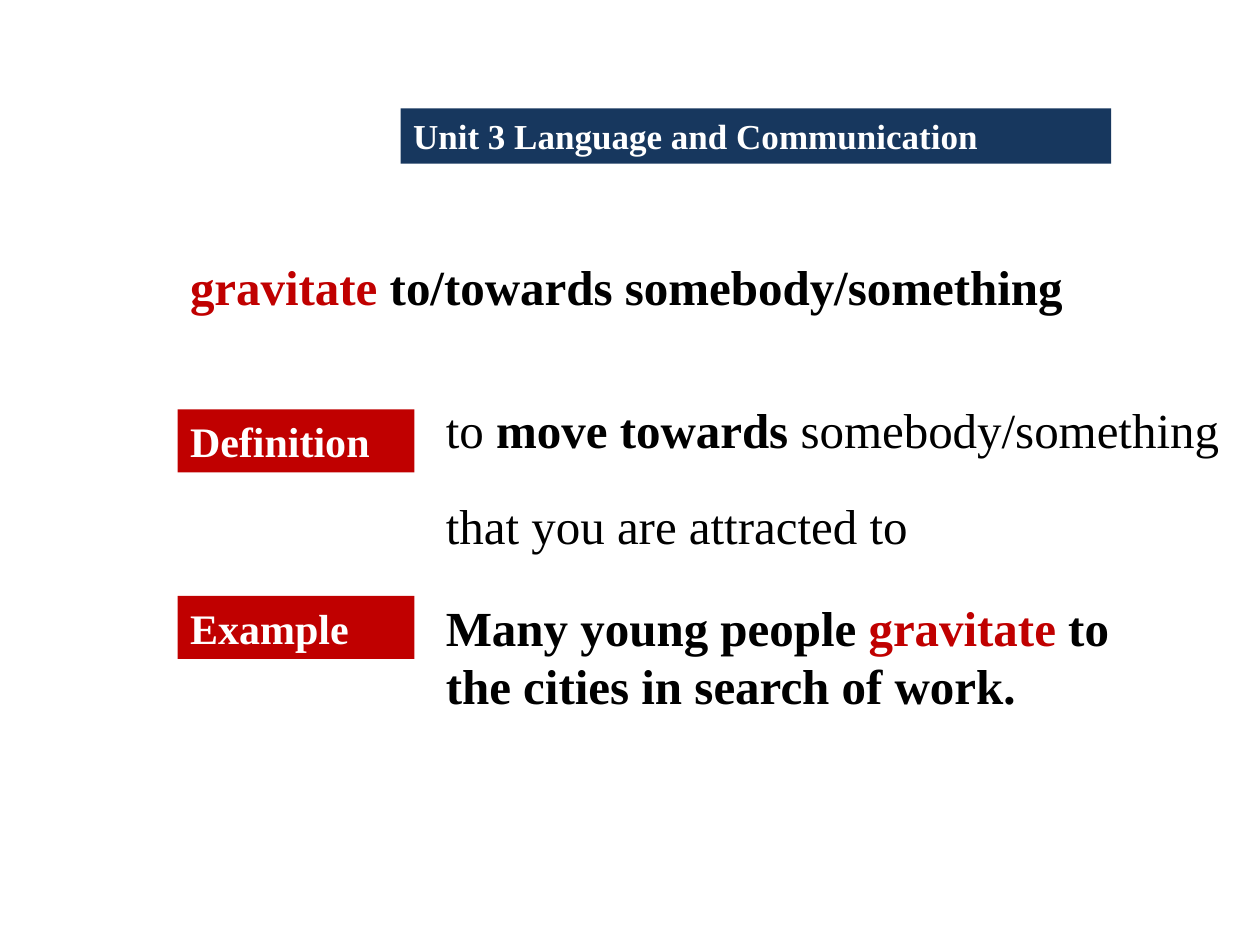
from dataclasses import dataclass

from pptx import Presentation
from pptx.dml.color import RGBColor
from pptx.enum.shapes import MSO_SHAPE as Shape
from pptx.enum.text import MSO_ANCHOR as Anchor, PP_ALIGN as Align
from pptx.util import Inches, Pt


@dataclass(frozen=True)
class Theme:
    font: str = "Times New Roman"
    navy: RGBColor = RGBColor(0x17, 0x37, 0x5E)
    red: RGBColor = RGBColor(0xC0, 0x00, 0x00)
    black: RGBColor = RGBColor(0x00, 0x00, 0x00)
    white: RGBColor = RGBColor(0xFF, 0xFF, 0xFF)
    body_size: int = 28
    label_size: int = 24
    unit_size: int = 20


THEME = Theme()


def style(run, size, color, bold):
    run.font.name = THEME.font
    run.font.size = Pt(size)
    run.font.bold = bold
    run.font.color.rgb = color


def add_banner(slide, left, top, width, height, wording, fill, size):
    banner = slide.shapes.add_shape(
        Shape.RECTANGLE, Inches(left), Inches(top), Inches(width), Inches(height)
    )
    banner.shadow.inherit = False
    banner.fill.solid()
    banner.fill.fore_color.rgb = fill
    banner.line.fill.background()
    frame = banner.text_frame
    frame.word_wrap = True
    frame.vertical_anchor = Anchor.TOP
    frame.text = wording
    line = frame.paragraphs[0]
    line.alignment = Align.LEFT
    style(line.runs[0], size, THEME.white, True)


def add_passage(slide, left, top, width, height, pieces, anchor=Anchor.TOP):
    passage = slide.shapes.add_textbox(
        Inches(left), Inches(top), Inches(width), Inches(height)
    )
    frame = passage.text_frame
    frame.word_wrap = True
    frame.vertical_anchor = anchor
    paragraph = frame.paragraphs[0]
    for wording, color, bold in pieces:
        for index, part in enumerate(wording.split("\n")):
            if index:
                paragraph.add_line_break()
            run = paragraph.add_run()
            run.text = part
            style(run, THEME.body_size, color, bold)


def main():
    deck = Presentation()
    deck.slide_width, deck.slide_height = Inches(10), Inches(7.5)
    slide = deck.slides.add_slide(deck.slide_layouts[6])

    phrase = [
        ("gravitate", THEME.red, True),
        (" to/towards somebody/something", THEME.black, True),
    ]
    definition = [
        ("to ", THEME.black, False),
        ("move towards ", THEME.black, True),
        ("somebody/something \nthat you are attracted to", THEME.black, False),
    ]
    example = [
        ("Many young people ", THEME.black, True),
        ("gravitate", THEME.red, True),
        (" to the cities in search of work.", THEME.black, True),
    ]

    add_passage(slide, 1.41, 1.76, 7.85, 1.02, phrase, Anchor.MIDDLE)
    add_banner(slide, 3.18, 0.86, 5.64, 0.44,
               "Unit 3 Language and Communication", THEME.navy, THEME.unit_size)

    sections = [
        ("Definition", 3.25, definition, 3.12, 6.41),
        ("Example", 4.73, example, 4.69, 5.86),
    ]
    for label, label_top, pieces, passage_top, passage_width in sections:
        add_passage(slide, 3.44, passage_top, passage_width, 1.04, pieces)
        add_banner(slide, 1.41, label_top, 1.88, 0.5,
                   label, THEME.red, THEME.label_size)

    deck.save("out.pptx")


if __name__ == "__main__":
    main()
